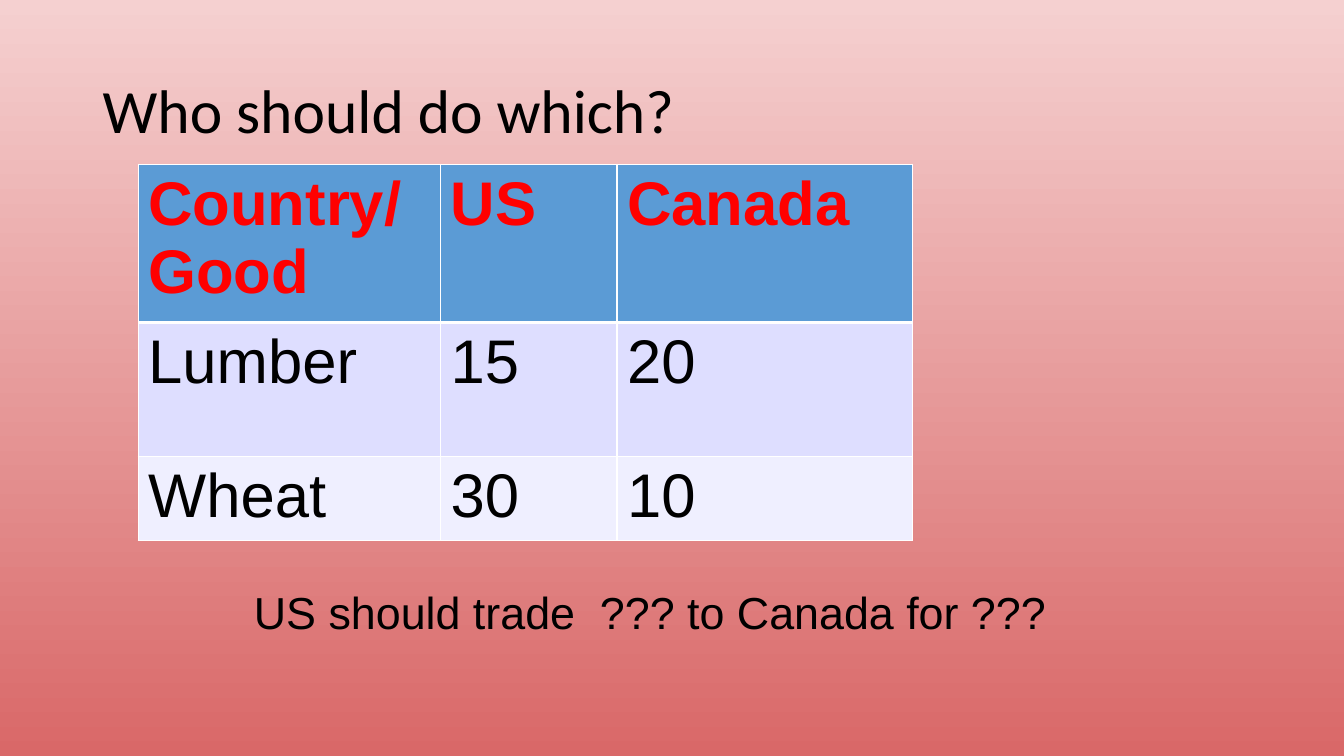
from dataclasses import dataclass

import lxml.etree
import pptx
import pptx.dml.color
import pptx.enum.text
import pptx.oxml.ns
import pptx.util

Inches = pptx.util.Inches


@dataclass(frozen=True)
class Theme:
    background_top: str = "F5D0D0"
    background_bottom: str = "D96868"
    ink: str = "000000"
    header_ink: str = "FF0000"
    header_fill: str = "5B9BD5"
    lumber_fill: str = "DEDEFF"
    wheat_fill: str = "EFEFFF"
    border: str = "FFFFFF"
    title_font: str = "Calibri"
    body_font: str = "Arial"
    large: int = 44
    medium: int = 32
    thin_line: int = 1
    thick_line: int = 3


THEME = Theme()


@dataclass(frozen=True)
class TableRow:
    texts: tuple[str, ...]
    height: float
    fill: str
    ink: str = THEME.ink
    bold: bool = False
    top_line: int = THEME.thin_line
    bottom_line: int = THEME.thin_line


@dataclass(frozen=True)
class TextLine:
    text: str
    place: tuple[float, float, float, float]
    size: int
    font: str
    spacing: float = 1.0
    anchor: pptx.enum.text.MSO_ANCHOR = pptx.enum.text.MSO_ANCHOR.TOP


COLUMN_WIDTHS = (3, 1.75, 2.93)
ROWS = (
    TableRow(("Country/Good", "US", "Canada"), 1.57, THEME.header_fill,
             ink=THEME.header_ink, bold=True, bottom_line=THEME.thick_line),
    TableRow(("Lumber", "15", "20"), 1.33, THEME.lumber_fill,
             top_line=THEME.thick_line),
    TableRow(("Wheat", "30", "10"), 0.83, THEME.wheat_fill),
)
TITLE = TextLine("Who should do which?", (0.92, 0.4, 11.5, 1.45),
                 THEME.large, THEME.title_font, spacing=0.9,
                 anchor=pptx.enum.text.MSO_ANCHOR.MIDDLE)
QUESTION = TextLine("US should trade  ??? to Canada for ???",
                    (2.42, 5.75, 8.17, 0.64), THEME.medium, THEME.body_font)


def rgb(value: str) -> pptx.dml.color.RGBColor:
    return pptx.dml.color.RGBColor.from_string(value)


def write_text(frame, text: str, *, size: int, font: str, color: str = THEME.ink,
               bold: bool = False, spacing: float = 1.0) -> None:
    frame.word_wrap = True
    para = frame.paragraphs[0]
    para.line_spacing = spacing
    span = para.add_run()
    span.text = text
    span.font.size = pptx.util.Pt(size)
    span.font.name = font
    span.font.bold = bold
    span.font.color.rgb = rgb(color)


def add_text_line(page, line: TextLine) -> None:
    box = page.shapes.add_textbox(*map(Inches, line.place))
    box.text_frame.vertical_anchor = line.anchor
    write_text(box.text_frame, line.text, size=line.size, font=line.font,
               spacing=line.spacing)


def set_borders(cell, top: int, bottom: int) -> None:
    """Draw all four sides; the line elements must precede the cell's fill."""
    properties = cell._tc.get_or_add_tcPr()
    qn = pptx.oxml.ns.qn
    sides = {"lnL": THEME.thin_line, "lnR": THEME.thin_line,
             "lnT": top, "lnB": bottom}
    for index, (side, width) in enumerate(sides.items()):
        border = lxml.etree.Element(qn(f"a:{side}"), w=str(pptx.util.Pt(width)))
        fill = lxml.etree.SubElement(border, qn("a:solidFill"))
        lxml.etree.SubElement(fill, qn("a:srgbClr"), val=THEME.border)
        properties.insert(index, border)


def add_goods_table(page) -> None:
    frame = page.shapes.add_table(
        len(ROWS), len(COLUMN_WIDTHS), Inches(1.37), Inches(1.63),
        Inches(sum(COLUMN_WIDTHS)), Inches(sum(row.height for row in ROWS)))
    table = frame.table
    table.horz_banding = False
    for column, width in zip(table.columns, COLUMN_WIDTHS):
        column.width = Inches(width)
    for table_row, row in zip(table.rows, ROWS):
        table_row.height = Inches(row.height)
        for cell, text in zip(table_row.cells, row.texts):
            cell.fill.solid()
            cell.fill.fore_color.rgb = rgb(row.fill)
            set_borders(cell, row.top_line, row.bottom_line)
            write_text(cell.text_frame, text, size=THEME.large,
                       font=THEME.body_font, color=row.ink, bold=row.bold)


def paint_background(page) -> None:
    fill = page.background.fill
    fill.gradient()
    fill.gradient_angle = 270
    colors = (THEME.background_top, THEME.background_bottom)
    for position, (stop, color) in enumerate(zip(fill.gradient_stops, colors)):
        stop.position = position
        stop.color.rgb = rgb(color)


def main() -> None:
    deck = pptx.Presentation()
    deck.slide_width, deck.slide_height = Inches(13.33), Inches(7.5)
    page = deck.slides.add_slide(deck.slide_layouts[6])
    paint_background(page)
    add_text_line(page, TITLE)
    add_goods_table(page)
    add_text_line(page, QUESTION)
    deck.save("out.pptx")


if __name__ == "__main__":
    main()
